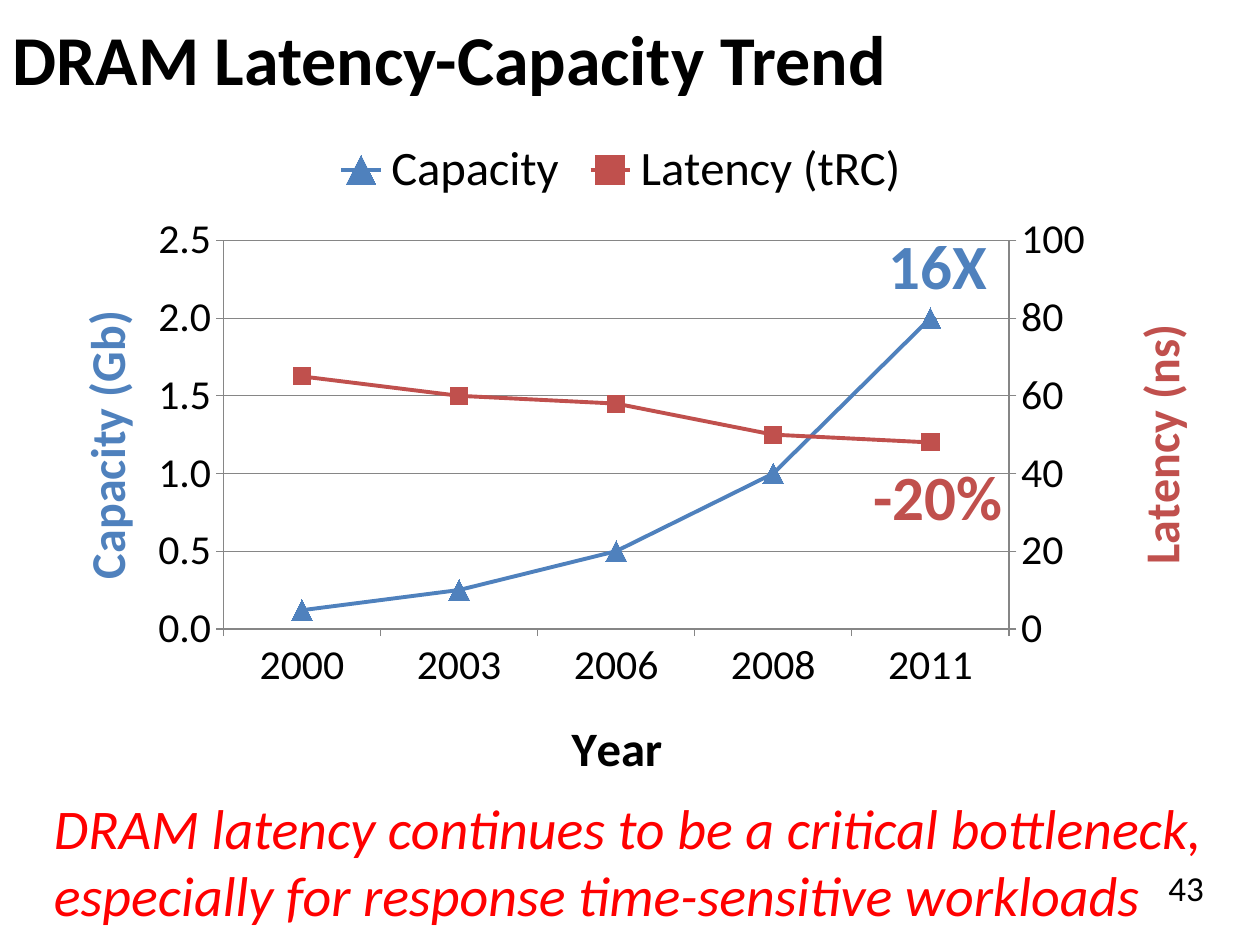
from copy import deepcopy
from dataclasses import dataclass

from pptx import Presentation
from pptx.chart.axis import CategoryAxis, ValueAxis
from pptx.chart.data import CategoryChartData
from pptx.dml.color import RGBColor
from pptx.enum.chart import XL_CHART_TYPE, XL_LEGEND_POSITION, XL_MARKER_STYLE, XL_TICK_MARK
from pptx.enum.text import MSO_ANCHOR, PP_ALIGN
from pptx.oxml import parse_xml
from pptx.oxml.ns import nsdecls, qn
from pptx.util import Inches, Pt

FONT = "Calibri"
COLORS = {
    "text": "000000",
    "capacity": "4F81BD",
    "latency": "C0504D",
    "message": "FF0000",
    "axis": "868686",
}
YEARS = ["2000", "2003", "2006", "2008", "2011"]


@dataclass
class TextItem:
    text: str
    box: tuple[float, float, float, float]
    size: int
    color: str = "text"
    bold: bool = False
    italic: bool = False
    align: PP_ALIGN = PP_ALIGN.LEFT
    anchor: MSO_ANCHOR = MSO_ANCHOR.TOP


@dataclass
class SeriesItem:
    name: str
    values: tuple[float, ...]
    color: str
    marker: XL_MARKER_STYLE
    marker_size: int


@dataclass
class AxisItem:
    title: str
    color: str
    position: tuple[float, float]
    rotated: bool = True


TEXTS = [
    TextItem("43", (8.83, 6.83, 1.17, 0.67), 20, align=PP_ALIGN.CENTER),
    TextItem("DRAM Latency-Capacity Trend", (0, 0, 10, 0.92), 40, bold=True,
             anchor=MSO_ANCHOR.MIDDLE),
    TextItem("16X", (6.83, 1.75, 1.23, 0.71), 36, "capacity", bold=True,
             align=PP_ALIGN.CENTER),
    TextItem("-20%", (6.83, 3.58, 1.23, 0.71), 36, "latency", bold=True,
             align=PP_ALIGN.CENTER),
    TextItem("DRAM latency continues to be a critical bottleneck, "
             "especially for response time-sensitive workloads",
             (0.33, 6.25, 9.33, 1.18), 32, "message", italic=True),
]
SERIES = [
    SeriesItem("Capacity", (0.12, 0.25, 0.5, 1, 2), "capacity",
               XL_MARKER_STYLE.TRIANGLE, 12),
    SeriesItem("Latency (tRC)", (65, 60, 58, 50, 48), "latency",
               XL_MARKER_STYLE.SQUARE, 10),
]


def rgb(name: str) -> RGBColor:
    return RGBColor.from_string(COLORS[name])


def style_font(font, size: int, color: str = "text", bold: bool = False) -> None:
    font.name = FONT
    font.size = Pt(size)
    font.bold = bold
    font.color.rgb = rgb(color)


def add_text(slide, item: TextItem) -> None:
    text_box = slide.shapes.add_textbox(*(Inches(length) for length in item.box))
    frame = text_box.text_frame
    frame.word_wrap = True
    frame.vertical_anchor = item.anchor
    paragraph = frame.paragraphs[0]
    paragraph.alignment = item.align
    run = paragraph.add_run()
    run.text = item.text
    style_font(run.font, item.size, item.color, item.bold)
    run.font.italic = item.italic


def set_layout(element, index: int, inner: bool = False, **fractions: float) -> None:
    """Place a chart part by fractions of the chart's width and height."""
    for old in element.findall(qn("c:layout")):
        element.remove(old)
    target = '<c:layoutTarget val="inner"/>' if inner else ""
    numbers = "".join(f'<c:{key} val="{value}"/>' for key, value in fractions.items())
    element.insert(index, parse_xml(
        f'<c:layout {nsdecls("c")}><c:manualLayout>{target}<c:xMode val="edge"/>'
        f'<c:yMode val="edge"/>{numbers}</c:manualLayout></c:layout>'))


def style_axis(axis, item: AxisItem) -> None:
    axis.major_tick_mark = XL_TICK_MARK.OUTSIDE
    axis.minor_tick_mark = XL_TICK_MARK.NONE
    axis.format.line.color.rgb = rgb("axis")
    axis.format.line.width = Pt(0.75)
    style_font(axis.tick_labels.font, 24)
    frame = axis.axis_title.text_frame
    run = frame.paragraphs[0].add_run()
    run.text = item.title
    style_font(run.font, 28, item.color, bold=True)
    if item.rotated:
        body = axis.axis_title._element.find(".//" + qn("a:bodyPr"))
        body.set("rot", "-5400000")
        body.set("vert", "horz")
    left, top = item.position
    set_layout(axis.axis_title._element, 1, x=left, y=top)


def set_scale(axis, maximum: float, step: float, number_format: str) -> None:
    axis.minimum_scale = 0
    axis.maximum_scale = maximum
    axis.major_unit = step
    axis.tick_labels.number_format = number_format
    axis.tick_labels.number_format_is_linked = False


def split_to_right_axis(chart) -> ValueAxis:
    """Move the last series to its own line plot with a value axis on the right."""
    plot_area = chart._chartSpace.find(".//" + qn("c:plotArea"))
    left_plot = plot_area.find(qn("c:lineChart"))
    right_plot = deepcopy(left_plot)
    left_plot.remove(left_plot.findall(qn("c:ser"))[-1])
    right_plot.remove(right_plot.find(qn("c:ser")))
    left_plot.addnext(right_plot)

    left_value = chart.value_axis._element
    category = deepcopy(chart.category_axis._element)
    value = deepcopy(left_value)
    category_id, value_id = "50010", "50020"
    for axis, own_id, other_id in ((category, category_id, value_id),
                                   (value, value_id, category_id)):
        axis.find(qn("c:axId")).set("val", own_id)
        axis.find(qn("c:crossAx")).set("val", other_id)
    for reference, axis_id in zip(right_plot.findall(qn("c:axId")), (category_id, value_id)):
        reference.set("val", axis_id)
    value.find(qn("c:axPos")).set("val", "r")
    value.find(qn("c:crosses")).set("val", "max")
    left_value.addnext(value)
    value.addnext(category)
    CategoryAxis(category).visible = False
    return ValueAxis(value)


def style_series(series, item: SeriesItem) -> None:
    series.smooth = False
    series.format.line.color.rgb = rgb(item.color)
    series.format.line.width = Pt(2.25)
    series.marker.style = item.marker
    series.marker.size = item.marker_size
    series.marker.format.fill.solid()
    series.marker.format.fill.fore_color.rgb = rgb(item.color)
    series.marker.format.line.color.rgb = rgb(item.color)


def add_trend_chart(slide) -> None:
    data = CategoryChartData()
    data.categories = YEARS
    for item in SERIES:
        data.add_series(item.name, item.values)
    chart = slide.shapes.add_chart(XL_CHART_TYPE.LINE_MARKERS, Inches(0.33), Inches(0.97),
                                   Inches(9.25), Inches(5.33), data).chart
    style_font(chart.font, 10)
    chart.has_title = False
    chart.has_legend = True
    chart.legend.position = XL_LEGEND_POSITION.TOP
    chart.legend.include_in_layout = False
    style_font(chart.legend.font, 28)

    left_axis = chart.value_axis
    right_axis = split_to_right_axis(chart)
    for plot, item in zip(chart.plots, SERIES):
        plot.vary_by_categories = False
        style_series(plot.series[0], item)

    left_axis.has_major_gridlines = True
    left_axis.major_gridlines.format.line.color.rgb = rgb("axis")
    left_axis.major_gridlines.format.line.width = Pt(0.75)
    right_axis.has_major_gridlines = False
    set_scale(left_axis, 2.5, 0.5, "#,##0.0")
    set_scale(right_axis, 100, 20, "General")
    style_axis(chart.category_axis, AxisItem("Year", "text", (0.45, 0.89), rotated=False))
    style_axis(left_axis, AxisItem("Capacity (Gb)", "capacity", (0.02, 0.28)))
    style_axis(right_axis, AxisItem("Latency (ns)", "latency", (0.93, 0.3)))
    plot_area = chart._chartSpace.find(".//" + qn("c:plotArea"))
    set_layout(plot_area, 0, inner=True, x=0.157, y=0.18, w=0.678, h=0.591)


def main() -> None:
    presentation = Presentation()
    presentation.slide_width = Inches(10)
    presentation.slide_height = Inches(7.5)
    slide = presentation.slides.add_slide(presentation.slide_layouts[6])
    add_trend_chart(slide)
    for item in TEXTS:
        add_text(slide, item)
    presentation.save("out.pptx")


if __name__ == "__main__":
    main()
